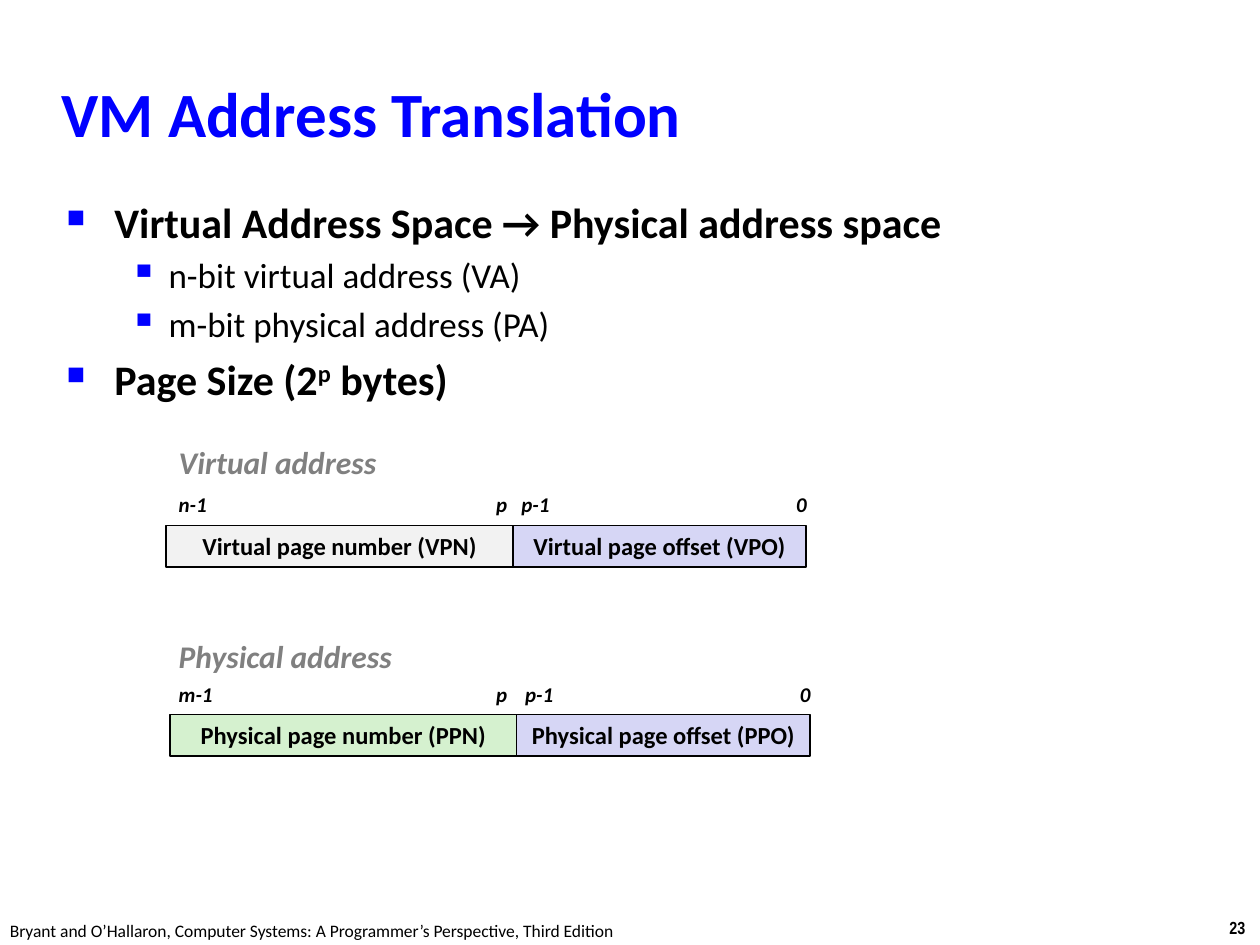
from pptx import Presentation
from pptx.dml.color import RGBColor
from pptx.enum.shapes import MSO_SHAPE as Shape
from pptx.enum.text import MSO_ANCHOR as Anchor, PP_ALIGN as Align
from pptx.oxml import parse_xml
from pptx.oxml.ns import nsdecls
from pptx.util import Inches, Pt

BLACK = RGBColor(0x00, 0x00, 0x00)
BLUE = RGBColor(0x00, 0x00, 0xFF)
GRAY = RGBColor(0x80, 0x80, 0x80)
PALE_GRAY = RGBColor(0xF2, 0xF2, 0xF2)
GREEN = RGBColor(0xD5, 0xF1, 0xCF)
LAVENDER = RGBColor(0xD6, 0xD6, 0xF5)

TITLE = dict(size=Pt(36), bold=True, color=BLUE)
POINT = dict(size=Pt(24), bold=True)
SUBPOINT = dict(size=Pt(20))
HEADING = dict(size=Pt(18), bold=True, italic=True, color=GRAY)
BIT = dict(size=Pt(12), bold=True, italic=True)
FIELD = dict(size=Pt(14), bold=True)
FOOTER = dict(size=Pt(10))
PAGE_NUMBER = dict(size=Pt(10), bold=True, name="Arial Narrow")

# Outline level: bullet sign, size in percent, text indent, hanging indent
BULLETS = [("■", 60, 0.38, 0.38), ("▪", 110, 0.81, 0.31)]
OUTLINE = [
    (0, ["Virtual Address Space → Physical address space"]),
    (1, ["n-bit virtual address (VA)"]),
    (1, ["m-bit physical address (PA)"]),
    (0, ["Page Size (2", "p", " bytes)"]),
]

NUMBER_WIDTH, OFFSET_WIDTH, FIELD_HEIGHT = 2.75, 2.33, 0.33
LABEL_LEFT, P_LEFT = 1.32, 3.84


class SlideBuilder:
    def __init__(self, slide, font="Calibri"):
        self.slide = slide
        self.font = font

    def style(self, font, values):
        for key, value in {"name": self.font, "color": BLACK, **values}.items():
            if key == "color":
                font.color.rgb = value
            else:
                setattr(font, key, value)

    def text(self, words, left, top, width, height, values, wrap=False, anchor=Anchor.TOP):
        frame = self.slide.shapes.add_textbox(
            Inches(left), Inches(top), Inches(width), Inches(height)).text_frame
        frame.word_wrap = wrap
        frame.vertical_anchor = anchor
        line = frame.paragraphs[0]
        line.text = words
        self.style(line.runs[0].font, values)

    def outline(self, items, left, top, width, height):
        """Add a bulleted list; the second piece of an item is superscript."""
        frame = self.slide.shapes.add_textbox(
            Inches(left), Inches(top), Inches(width), Inches(height)).text_frame
        frame.word_wrap = True
        for index, (level, pieces) in enumerate(items):
            line = frame.add_paragraph() if index else frame.paragraphs[0]
            values = SUBPOINT if level else POINT
            line.level = level
            if index:
                line.space_before = Pt(values["size"].pt * 0.2)
            self.bullet(line, *BULLETS[level])
            for position, piece in enumerate(pieces):
                run = line.add_run()
                run.text = piece
                self.style(run.font, values)
                if position == 1:
                    run.font._element.set("baseline", "30000")

    def bullet(self, line, sign, percent, indent, hanging):
        props = line._p.get_or_add_pPr()
        props.set("marL", str(Inches(indent)))
        props.set("indent", str(-Inches(hanging)))
        for xml in (f'<a:buClr {nsdecls("a")}><a:srgbClr val="{BLUE}"/></a:buClr>',
                    f'<a:buSzPct {nsdecls("a")} val="{percent * 1000}"/>',
                    f'<a:buChar {nsdecls("a")} char="{sign}"/>'):
            props.append(parse_xml(xml))

    def field(self, words, left, top, width, fill):
        box = self.slide.shapes.add_shape(
            Shape.RECTANGLE, Inches(left), Inches(top), Inches(width), Inches(FIELD_HEIGHT))
        box.shadow.inherit = False
        box.fill.solid()
        box.fill.fore_color.rgb = fill
        box.line.color.rgb = BLACK
        box.line.width = Pt(1)
        frame = box.text_frame
        frame.word_wrap = False
        frame.vertical_anchor = Anchor.MIDDLE
        line = frame.paragraphs[0]
        line.text = words
        line.alignment = Align.CENTER
        self.style(line.runs[0].font, FIELD)

    def address(self, kind, top_bit, left, heading_top, bits_top, fields_top, fill):
        """Add a heading, the bit positions and the two fields of an address."""
        offset_left = left + NUMBER_WIDTH
        initial = kind[0]
        self.text(f"{kind} address", LABEL_LEFT, heading_top, 1.9, 0.4, HEADING)
        bits = [(top_bit, LABEL_LEFT, 0.5), ("p", P_LEFT, 0.33),
                ("p-1", offset_left - 0.03, 0.47),
                ("0", offset_left + OFFSET_WIDTH - 0.18, 0.33)]
        for bit, bit_left, width in bits:
            self.text(bit, bit_left, bits_top, width, 0.3, BIT)
        self.field(f"{kind} page number ({initial}PN)", left, fields_top, NUMBER_WIDTH, fill)
        self.field(f"{kind} page offset ({initial}PO)", offset_left, fields_top,
                   OFFSET_WIDTH, LAVENDER)


def main():
    deck = Presentation()
    deck.slide_width, deck.slide_height = Inches(10), Inches(7.5)
    page = SlideBuilder(deck.slides.add_slide(deck.slide_layouts[6]))
    page.text("VM Address Translation", 0.39, 0.48, 8.3, 0.83, TITLE, True, Anchor.MIDDLE)
    page.outline(OUTLINE, 0.43, 1.51, 9.57, 5.42)
    page.address("Virtual", "n-1", 1.32, 3.47, 3.85, 4.17, PALE_GRAY)
    page.address("Physical", "m-1", 1.35, 5.01, 5.36, 5.67, GREEN)
    page.text("Bryant and O’Hallaron, Computer Systems: A Programmer’s Perspective, Third Edition",
              -0.02, 7.25, 5.08, 0.27, FOOTER)
    page.text("23", 9.66, 7.23, 0.34, 0.27, PAGE_NUMBER)
    deck.save("out.pptx")


if __name__ == "__main__":
    main()
